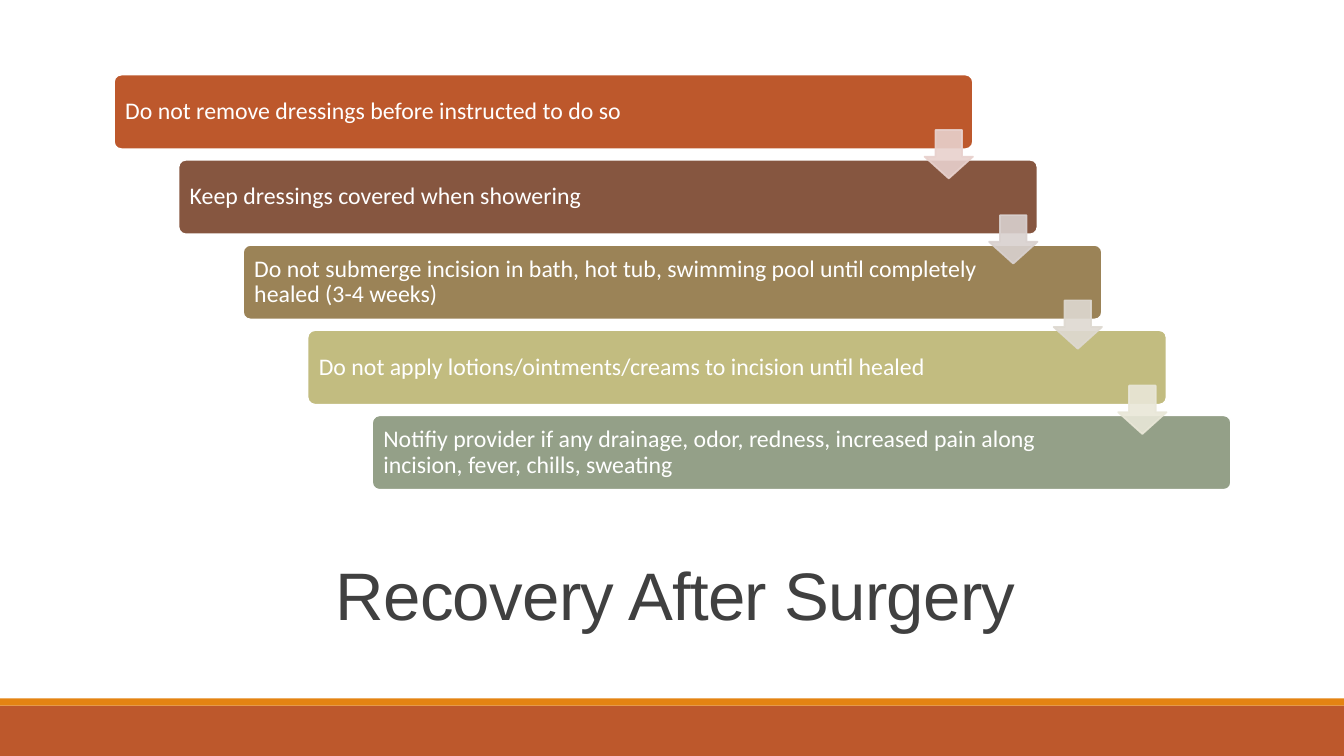
from lxml import etree
from pptx import Presentation
from pptx.dml.color import RGBColor
from pptx.enum import shapes, text
from pptx.oxml.ns import qn
from pptx.util import Inches, Pt

TITLE = "Recovery After Surgery"
# instruction, bar colour, colour of the arrow to the next bar
STEPS = [
    ("Do not remove dressings before instructed to do so", "BD582C", "E8D1CD"),
    ("Keep dressings covered when showering", "865640", "D9D1CF"),
    ("Do not submerge incision in bath, hot tub, swimming pool until "
     "completely healed (3-4 weeks)", "9B8357", "DED9D1"),
    ("Do not apply lotions/ointments/creams to incision until healed",
     "C2BC80", "E9E7D8"),
    ("Notifiy provider if any drainage, odor, redness, increased pain along "
     "incision, fever, chills, sweating", "94A088", None),
]
FOOTER_BANDS = [(7, 0.5, "BD582C"), (6.93, 0.07, "E48312")]

SLIDE_W, SLIDE_H = 13.33, 7.5
BAR_X, BAR_Y, BAR_W, BAR_H = 1.13, 0.74, 8.52, 0.74
STEP_X, STEP_Y = 0.64, 0.845
ARROW_X, ARROW_Y, ARROW_SIZE = 9.17, 1.29, 0.48
ARROW_OPACITY = 90


def rgb(value):
    return RGBColor.from_string(value)


def add_block(kind, x, y, width, height, fill, line=None, adjust=()):
    block = slide.shapes.add_shape(
        kind, Inches(x), Inches(y), Inches(width), Inches(height))
    block.shadow.inherit = False
    block.fill.solid()
    block.fill.fore_color.rgb = rgb(fill)
    if line:
        block.line.color.rgb = rgb(line)
        block.line.width = Pt(1.25)
    else:
        block.line.fill.background()
    for index, value in enumerate(adjust):
        block.adjustments[index] = value
    return block


def set_opacity(block, percent):
    for color in block._element.spPr.iter(qn("a:srgbClr")):
        etree.SubElement(color, qn("a:alpha")).set("val", str(percent * 1000))


def write_instruction(bar, instruction):
    frame = bar.text_frame
    frame.word_wrap = True
    frame.vertical_anchor = text.MSO_ANCHOR.MIDDLE
    frame.margin_left = frame.margin_top = frame.margin_bottom = Inches(0.09)
    frame.margin_right = Inches(1.21)
    para = frame.paragraphs[0]
    para.text = instruction
    para.alignment = text.PP_ALIGN.LEFT
    para.line_spacing = 0.9
    para.font.size = Pt(17)
    para.font.name = "Calibri"
    para.font.color.rgb = rgb("FFFFFF")


deck = Presentation()
deck.slide_width, deck.slide_height = Inches(SLIDE_W), Inches(SLIDE_H)
slide = deck.slides.add_slide(deck.slide_layouts[5])

for y, height, color in FOOTER_BANDS:
    add_block(shapes.MSO_SHAPE.RECTANGLE, 0, y, SLIDE_W, height, color)

title = slide.shapes.title
title.left, title.top = Inches(1.2), Inches(5.3)
title.width, title.height = Inches(11), Inches(1.3)
title.text_frame.text = TITLE
title.text_frame.vertical_anchor = text.MSO_ANCHOR.MIDDLE
para = title.text_frame.paragraphs[0]
para.alignment = text.PP_ALIGN.CENTER
para.line_spacing = 0.85
para.font.size = Pt(48)
para.font.name = "Arial"
para.font.color.rgb = rgb("404040")
para.runs[0].font._element.set("spc", "-50")

for i, (instruction, color, _) in enumerate(STEPS):
    bar = add_block(shapes.MSO_SHAPE.ROUNDED_RECTANGLE, BAR_X + i * STEP_X,
                    BAR_Y + i * STEP_Y, BAR_W, BAR_H, color, "FFFFFF", [0.1])
    write_instruction(bar, instruction)

for i, (_, _, color) in enumerate(STEPS[:-1]):
    arrow = add_block(shapes.MSO_SHAPE.DOWN_ARROW, ARROW_X + i * STEP_X,
                      ARROW_Y + i * STEP_Y, ARROW_SIZE, ARROW_SIZE,
                      color, color, [0.55, 0.45])
    set_opacity(arrow, ARROW_OPACITY)

deck.save("out.pptx")
